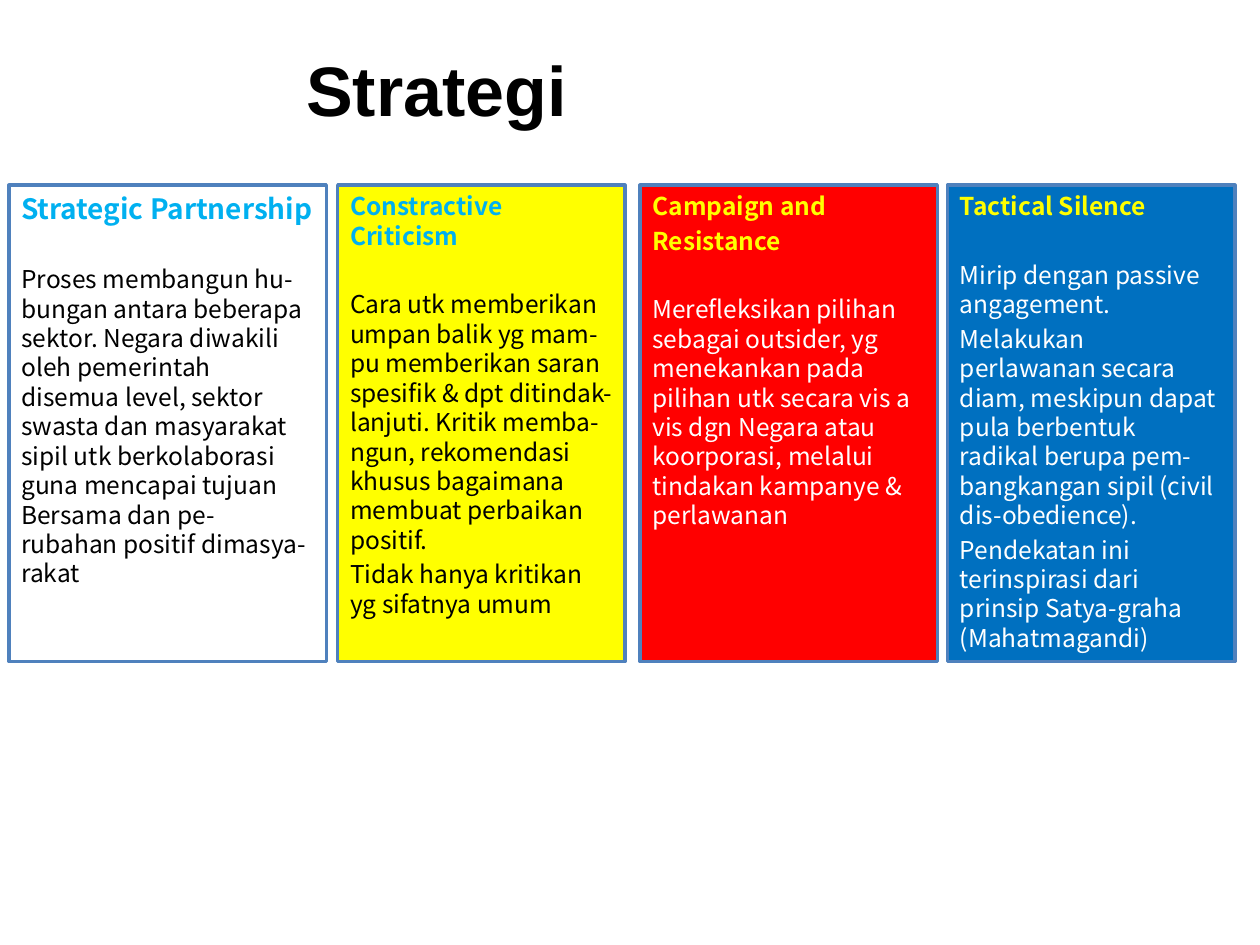
from dataclasses import dataclass

from pptx import Presentation
from pptx import util as u
from pptx.dml.color import RGBColor
from pptx.enum import shapes, text


@dataclass(frozen=True)
class Theme:
    title_font: str = "Arial"
    body_font: str = "Noto Sans CJK KR"
    title_size: int = 40
    lead_size: int = 16
    body_size: int = 14
    black: str = "000000"
    white: str = "FFFFFF"
    yellow: str = "FFFF00"
    red: str = "FF0000"
    blue: str = "0070C0"
    sky: str = "00B0F0"
    border: str = "4F81BD"


theme = Theme()


def write(para, words, *, font, size, color, bold=False, before=0):
    para.text = words
    para.alignment = text.PP_ALIGN.LEFT
    para.space_before = u.Pt(before)
    for span in para.runs:
        span.font.name = font
        span.font.size = u.Pt(size)
        span.font.bold = bold
        span.font.color.rgb = RGBColor.from_string(color)


deck = Presentation()
deck.slide_width, deck.slide_height = u.Inches(10), u.Inches(7.5)
page = deck.slides.add_slide(deck.slide_layouts[6])

# Title
title = page.shapes.add_textbox(u.Inches(1.93), u.Inches(0.13), u.Inches(3.07), u.Inches(1.15))
title.text_frame.word_wrap = True
title.text_frame.vertical_anchor = text.MSO_ANCHOR.MIDDLE
write(title.text_frame.paragraphs[0], "Strategi", font=theme.title_font,
      size=theme.title_size, color=theme.black, bold=True)
title.text_frame.paragraphs[0].alignment = text.PP_ALIGN.CENTER

# Strategies: left, width, fill, heading colour, heading size, text colour, heading, body
strategies = [
    (0.07, 2.52, theme.white, theme.sky, theme.lead_size, theme.black,
     ["Strategic Partnership"],
     ["Proses membangun hu-bungan antara beberapa sektor. Negara diwakili oleh pemerintah "
      "disemua level, sektor swasta dan masyarakat sipil utk berkolaborasi guna mencapai "
      "tujuan Bersama dan pe-\vrubahan positif dimasya-rakat"]),
    (2.68, 2.28, theme.yellow, theme.sky, theme.body_size, theme.black,
     ["Constractive Criticism"],
     ["Cara utk memberikan umpan balik yg mam-pu memberikan saran spesifik & dpt "
      "ditindak-lanjuti. Kritik memba-ngun, rekomendasi khusus bagaimana membuat "
      "perbaikan positif.",
      "Tidak hanya kritikan yg sifatnya umum"]),
    (5.08, 2.36, theme.red, theme.yellow, theme.body_size, theme.white,
     ["Campaign and", "Resistance"],
     ["Merefleksikan pilihan sebagai outsider, yg menekankan pada pilihan utk secara vis a "
      "vis dgn Negara atau koorporasi, melalui tindakan kampanye & perlawanan"]),
    (7.52, 2.28, theme.blue, theme.yellow, theme.body_size, theme.white,
     ["Tactical Silence"],
     ["Mirip dengan passive angagement.",
      "Melakukan perlawanan secara diam, meskipun dapat pula berbentuk\vradikal berupa "
      "pem-bangkangan sipil (civil dis-obedience).",
      "Pendekatan ini terinspirasi dari prinsip Satya-graha (Mahatmagandi)"]),
]
PARAGRAPH_GAP, HEADING_GAP = 2.8, 22.4

for left, width, fill, head_color, head_size, body_color, heading, body in strategies:
    box = page.shapes.add_shape(shapes.MSO_SHAPE.RECTANGLE, u.Inches(left), u.Inches(1.47),
                                u.Inches(width), u.Inches(3.78))
    box.shadow.inherit = False
    box.fill.solid()
    box.fill.fore_color.rgb = RGBColor.from_string(fill)
    box.line.color.rgb = RGBColor.from_string(theme.border)
    box.line.width = u.Pt(2)
    frame = box.text_frame
    frame.word_wrap = True
    frame.vertical_anchor = text.MSO_ANCHOR.TOP

    for index, words in enumerate(heading):
        para = frame.add_paragraph() if index else frame.paragraphs[0]
        write(para, words, font=theme.body_font, size=head_size, color=head_color,
              bold=True, before=PARAGRAPH_GAP if index else 0)
    for index, words in enumerate(body):
        write(frame.add_paragraph(), words, font=theme.body_font, size=theme.body_size,
              color=body_color, before=PARAGRAPH_GAP if index else HEADING_GAP)

deck.save("out.pptx")
